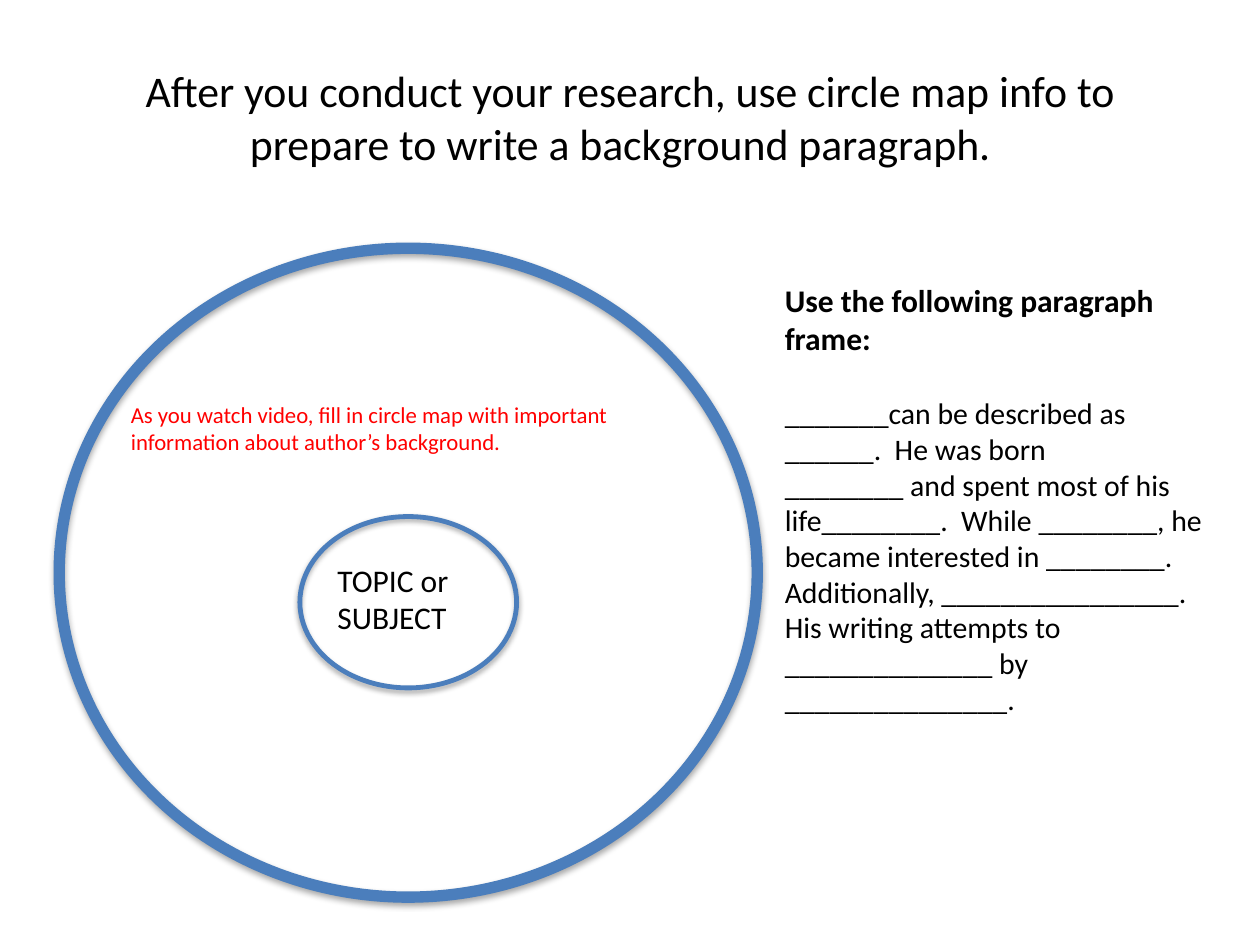
from pptx import Presentation
from pptx import util as u
from pptx.dml.color import RGBColor
from pptx.enum import shapes, text

PX = 9144
BLUE = RGBColor(0x4B, 0x7E, 0xBC)
BLACK = RGBColor(0, 0, 0)
RED = RGBColor(255, 0, 0)
FRAME = (
    "_______can be described as ______.  He was born",
    "________ and spent most of his life________.  While ________, he became interested in ________.",
    "Additionally, ________________.  His writing attempts to ______________ by _______________.",
)


def emu(*lengths):
    """Turn px lengths into EMU."""
    return [u.Emu(n * PX) for n in lengths]


def style(p, size, color=BLACK, bold=False):
    """Format the font of a paragraph's runs."""
    for r in p.runs:
        for name, value in dict(name="Calibri", size=u.Pt(size), bold=bold).items():
            setattr(r.font, name, value)
        r.font.color.rgb = color


def add_text(s, box, lines):
    """Add a text box holding one paragraph per (words, format) pair."""
    tf = s.shapes.add_textbox(*emu(*box)).text_frame
    tf.word_wrap = True
    for i, (words, fmt) in enumerate(lines):
        p = tf.add_paragraph() if i else tf.paragraphs[0]
        p.text = words
        style(p, **fmt)
    return tf


def add_ring(s, box, weight):
    """Add an unfilled ellipse with the theme's soft shadow."""
    sp = s.shapes.add_shape(shapes.MSO_SHAPE.OVAL, *emu(*box))
    sp.fill.background()
    sp.line.color.rgb = BLUE
    sp.line.width = u.Pt(weight)


def add_title(s, box):
    """Fill and place the title placeholder."""
    sp = s.shapes.title
    sp.left, sp.top, sp.width, sp.height = emu(*box)
    tf = sp.text_frame
    tf.text = "After you conduct your research, use circle map info to prepare to write a background paragraph.  "
    tf.auto_size = text.MSO_AUTO_SIZE.NONE
    tf.vertical_anchor = text.MSO_ANCHOR.MIDDLE
    p = tf.paragraphs[0]
    p.alignment = text.PP_ALIGN.CENTER
    style(p, 25)


def add_circle_map(s, box):
    """Draw the circle map with its topic and hint."""
    x, y, w, h = box
    add_ring(s, box, 6.5)
    add_ring(s, (x + 191, y + 213, 172, 136), 2.75)
    add_text(s, (x + 211, y + 243, 153, 71), [("TOPIC or SUBJECT", dict(size=18))])
    hint = "As you watch video, fill in circle map with important information about author’s background."
    add_text(s, (x + 47, y + 116, w - 106, 54), [(hint, dict(size=13, color=RED))])


def add_paragraph_frame(s, box):
    """Write the heading and the fill-in paragraph."""
    heading = ("Use the following paragraph frame:", dict(size=18, bold=True))
    tf = add_text(s, box, [heading] + [(words, dict(size=17)) for words in FRAME])
    tf.paragraphs[0].space_after = u.Pt(22)


def main():
    """Build and save the slide."""
    prs = Presentation()
    prs.slide_width, prs.slide_height = emu(1000, 750)
    s = prs.slides.add_slide(prs.slide_layouts[5])
    add_title(s, (50, 30, 900, 125))
    add_circle_map(s, (47, 197, 554, 515))
    add_paragraph_frame(s, (613, 218, 361, 387))
    prs.save("out.pptx")


if __name__ == "__main__":
    main()
